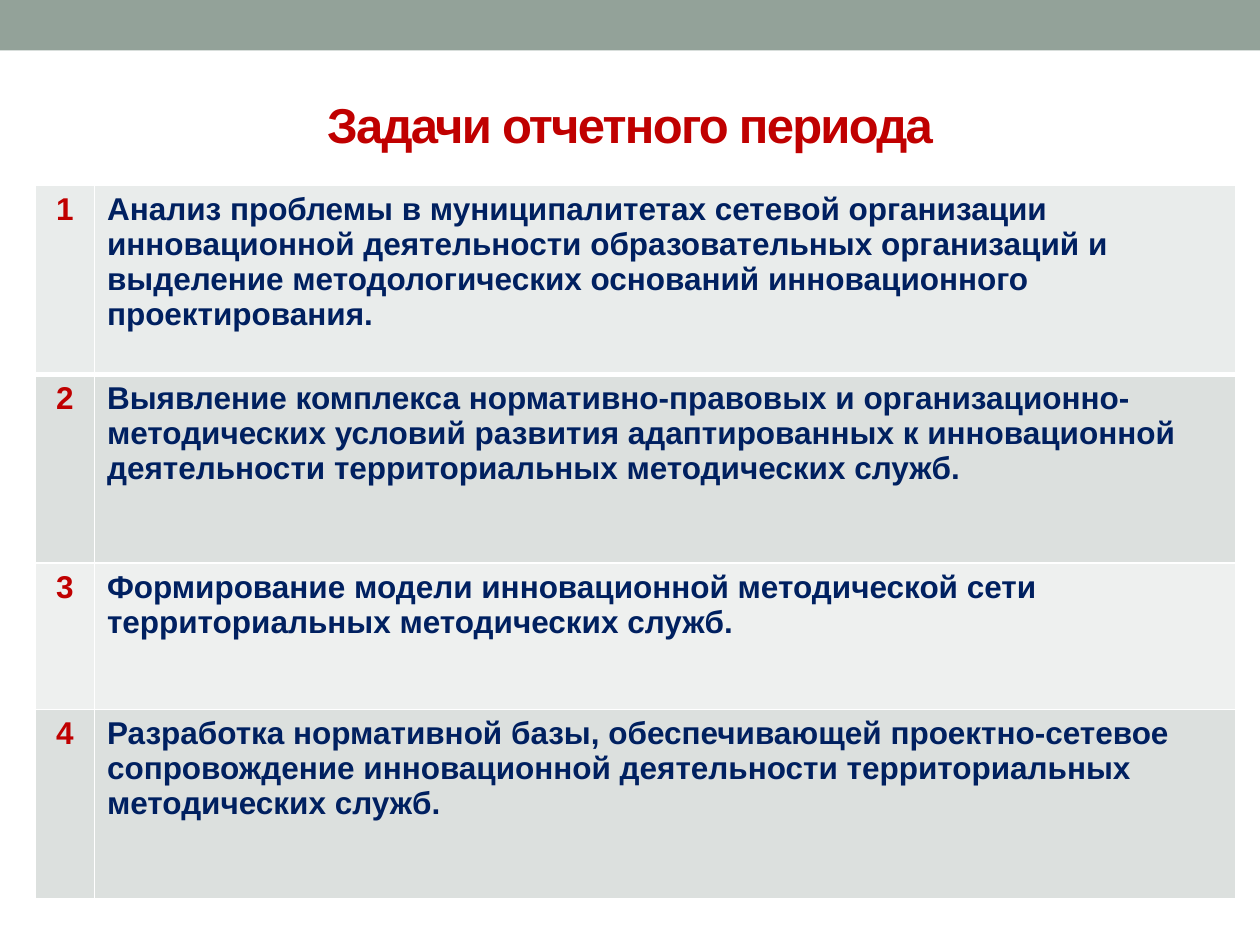
from typing import NamedTuple

from lxml import etree
from pptx import Presentation
from pptx.dml.color import RGBColor
from pptx.enum.shapes import MSO_SHAPE
from pptx.enum.text import MSO_ANCHOR, PP_ALIGN
from pptx.oxml.ns import qn
from pptx.util import Inches, Pt

RECT = MSO_SHAPE.RECTANGLE
MIDDLE = MSO_ANCHOR.MIDDLE
LEFT, CENTER = PP_ALIGN.LEFT, PP_ALIGN.CENTER
RED, NAVY, WHITE, SAGE = "C00000", "002060", "FFFFFF", "93A299"


class Task(NamedTuple):
    text: str
    height: float
    fill: str


TASKS = [
    Task("Анализ проблемы в муниципалитетах сетевой организации инновационной "
         "деятельности образовательных организаций и выделение методологических "
         "оснований инновационного проектирования.", 1.5, "E9ECEB"),
    Task("Выявление комплекса нормативно-правовых и организационно-методических "
         "условий развития адаптированных к инновационной деятельности "
         "территориальных методических служб.", 1.5, "DCE0DE"),
    Task("Формирование модели инновационной методической сети "
         "территориальных методических служб.", 1.16, "EEF0EF"),
    Task("Разработка нормативной базы, обеспечивающей проектно-сетевое "
         "сопровождение инновационной деятельности территориальных "
         "методических служб.", 1.5, "DCE0DE"),
]
WIDTHS = [0.47, 9.06]


def paint(fill, color: str) -> None:
    fill.solid()
    fill.fore_color.rgb = RGBColor.from_string(color)


def write(frame, text: str, *, size: float, color: str, align=LEFT,
          spacing: float = 0) -> None:
    """Put one bold paragraph in a text frame; spacing is in points."""
    frame.word_wrap = True
    para = frame.paragraphs[0]
    para.alignment = align
    run = para.add_run()
    run.text = text
    font = run.font
    font.name, font.size, font.bold = "Arial", Pt(size), True
    font.color.rgb = RGBColor.from_string(color)
    if spacing:
        run._r.get_or_add_rPr().set("spc", str(int(spacing * 100)))


def edge(cell, side: str, width: float) -> None:
    """Draw one white cell border; side is L, R, T or B."""
    props = cell._tc.get_or_add_tcPr()
    line = etree.SubElement(props, qn(f"a:ln{side}"), w=str(Pt(width)))
    solid = etree.SubElement(line, qn("a:solidFill"))
    etree.SubElement(solid, qn("a:srgbClr"), val=WHITE)


def add_band(slide) -> None:
    band = slide.shapes.add_shape(RECT, 0, 0, Inches(10), Inches(0.4))
    band.shadow.inherit = False
    paint(band.fill, SAGE)
    band.line.fill.background()


def add_title(slide) -> None:
    box = slide.shapes.add_textbox(Inches(0.5), Inches(0.58), Inches(9), Inches(0.8))
    box.text_frame.vertical_anchor = MIDDLE
    write(box.text_frame, "Задачи отчетного периода", size=28, color=RED,
          align=CENTER, spacing=-1)


def add_tasks(slide, tasks: list[Task]) -> None:
    height = sum(task.height for task in tasks)
    table = slide.shapes.add_table(
        len(tasks), len(WIDTHS), Inches(0.28), Inches(1.47),
        Inches(sum(WIDTHS)), Inches(height)).table
    for col, width in zip(table.columns, WIDTHS):
        col.width = Inches(width)
    for i, task in enumerate(tasks):
        row = table.rows[i]
        row.height = Inches(task.height)
        num, body = row.cells
        for cell in (num, body):
            for side in "LRTB":
                thick = (i, side) in ((0, "B"), (1, "T"))
                edge(cell, side, 3 if thick else 1)
            paint(cell.fill, task.fill)
        write(num.text_frame, str(i + 1), size=18, color=RED, align=CENTER)
        write(body.text_frame, task.text, size=18, color=NAVY)


def main() -> None:
    deck = Presentation()
    deck.slide_width, deck.slide_height = Inches(10), Inches(7.5)
    slide = deck.slides.add_slide(deck.slide_layouts[6])
    paint(slide.background.fill, WHITE)
    add_band(slide)
    add_title(slide)
    add_tasks(slide, TASKS)
    deck.save("out.pptx")


if __name__ == "__main__":
    main()
